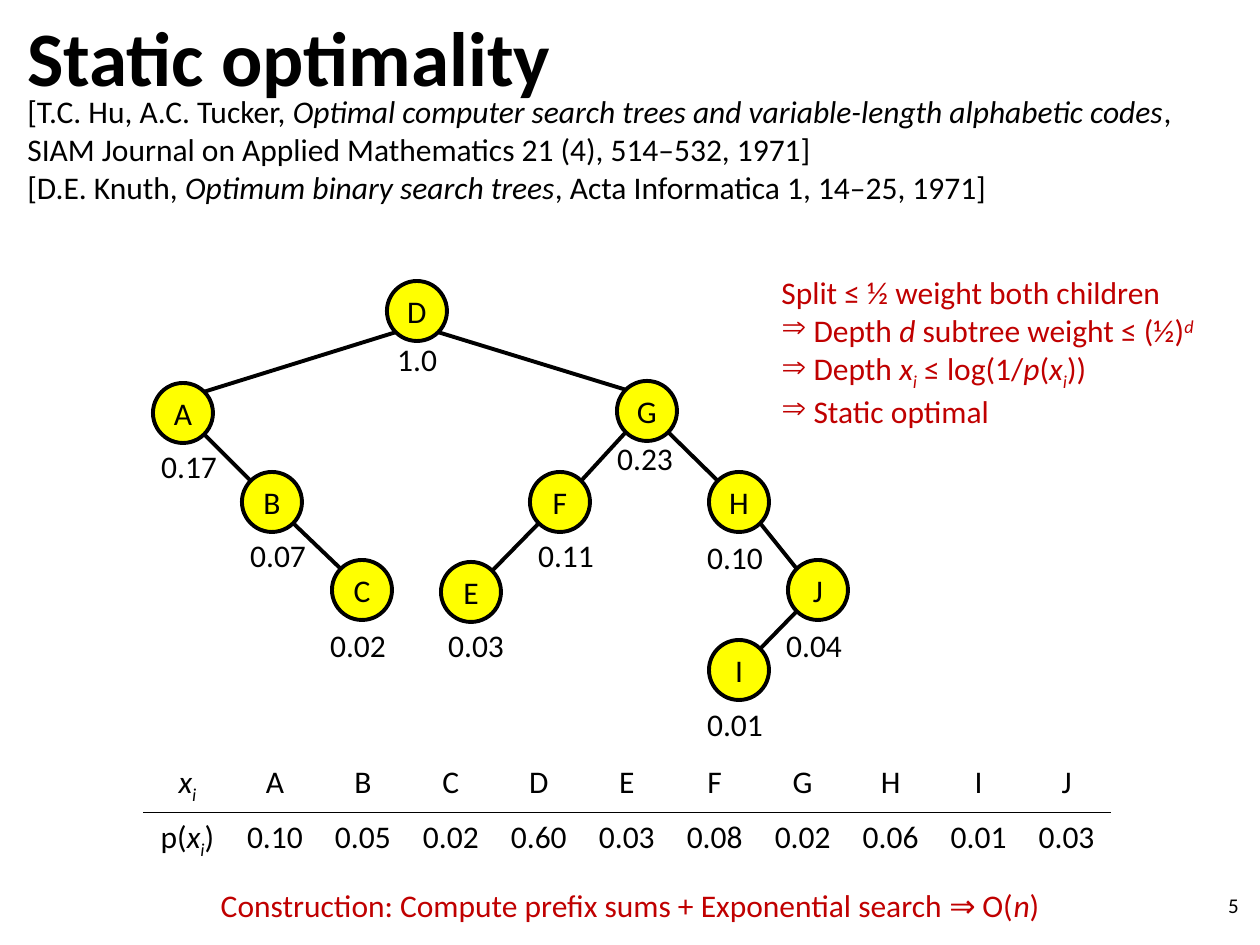
from collections import namedtuple
from math import sqrt

from lxml.etree import SubElement
from pptx import Presentation
from pptx.dml.color import RGBColor
from pptx.enum.shapes import MSO_CONNECTOR as Connector, MSO_SHAPE as Shape
from pptx.enum.text import MSO_ANCHOR as Anchor, PP_ALIGN as Align
from pptx.oxml.ns import qn
from pptx.util import Emu, Pt

BLACK = RGBColor(0x00, 0x00, 0x00)
WHITE = RGBColor(0xFF, 0xFF, 0xFF)
YELLOW = RGBColor(0xFF, 0xFF, 0x00)
RED = RGBColor(0xC0, 0x00, 0x00)

EMU_PER_PX = 914400 / 126
ITALIC = dict(italic=True)
SUB = dict(italic=True, baseline=-25000)
SUPER = dict(italic=True, baseline=30000)
X_I = [("x", ITALIC), ("i", SUB)]

Node = namedtuple("Node", "x y weight label_x label_top")
TREE = {
    "D": Node(417, 311, "1.0", 417, 334),
    "A": Node(183, 413, "0.17", 189, 441),
    "G": Node(647, 411, "0.23", 645, 433),
    "B": Node(272, 502, "0.07", 278, 530),
    "C": Node(362, 590, "0.02", 358, 620),
    "F": Node(560, 502, "0.11", 566, 530),
    "E": Node(471, 592, "0.03", 476, 620),
    "H": Node(739, 502, "0.10", 735, 532),
    "I": Node(739, 670, "0.01", 735, 699),
    "J": Node(818, 590, "0.04", 814, 620),
}
EDGES = ["DA", "DG", "AB", "BC", "GF", "GH", "FE", "HJ", "JI"]
PROBABILITIES = ["0.10", "0.05", "0.02", "0.60", "0.03",
                 "0.08", "0.02", "0.06", "0.01", "0.03"]


def px(length):
    return Emu(round(length * EMU_PER_PX))


def add_run(paragraph, text, *, size=18, color=BLACK, bold=False,
            italic=False, baseline=0):
    run = paragraph.add_run()
    run.text = text
    font = run.font
    font.name, font.size, font.bold, font.italic = "Calibri", Pt(size), bold, italic
    font.color.rgb = color
    if baseline:
        run._r.get_or_add_rPr().set("baseline", str(baseline))


def write(frame, paragraphs, align=Align.LEFT, **style):
    """Fill a frame; a paragraph is a string or a list of strings and (text, format)."""
    for index, runs in enumerate(paragraphs):
        paragraph = frame.add_paragraph() if index else frame.paragraphs[0]
        paragraph.alignment = align
        for run in [runs] if isinstance(runs, str) else runs:
            text, extra = (run, {}) if isinstance(run, str) else run
            add_run(paragraph, text, **{**style, **extra})


def add_bullet(paragraph, symbol):
    properties = paragraph._p.get_or_add_pPr()
    properties.set("marL", "0")
    properties.set("indent", "0")
    SubElement(properties, qn("a:buFont"), typeface="Symbol")
    SubElement(properties, qn("a:buChar"), char=symbol)


def add_border(cell, side, color):
    line = SubElement(cell._tc.get_or_add_tcPr(), qn(f"a:ln{side}"), w=str(Pt(1)))
    fill = SubElement(line, qn("a:solidFill"))
    SubElement(fill, qn("a:srgbClr"), val=str(color))


class TreeSlide:
    DIAMETER = 60
    LABEL_WIDTH = 169
    LINE_WIDTH = Pt(2.25)

    def __init__(self, deck):
        self.slide = deck.slides.add_slide(deck.slide_layouts[6])
        self.shapes = self.slide.shapes

    def text(self, left, top, width, height, paragraphs, anchor=Anchor.TOP, **style):
        frame = self.shapes.add_textbox(*map(px, (left, top, width, height))).text_frame
        frame.word_wrap = True
        frame.vertical_anchor = anchor
        write(frame, paragraphs, **style)
        return frame

    def node(self, key, node):
        radius = self.DIAMETER / 2
        circle = self.shapes.add_shape(
            Shape.OVAL, px(node.x - radius), px(node.y - radius),
            px(self.DIAMETER), px(self.DIAMETER))
        circle.shadow.inherit = False
        circle.fill.solid()
        circle.fill.fore_color.rgb = YELLOW
        circle.line.color.rgb = BLACK
        circle.line.width = self.LINE_WIDTH
        frame = circle.text_frame
        frame.margin_left = frame.margin_right = 0
        frame.margin_top = frame.margin_bottom = 0
        frame.vertical_anchor = Anchor.MIDDLE
        write(frame, [key], align=Align.CENTER)
        self.text(node.label_x - self.LABEL_WIDTH / 2, node.label_top,
                  self.LABEL_WIDTH, 50, [node.weight], align=Align.CENTER)

    def edge(self, parent, child):
        """Join the diagonal points of two circles, parent's lower to child's upper."""
        offset = self.DIAMETER / 2 / sqrt(2)
        shift = offset if child.x > parent.x else -offset
        ends = (parent.x + shift, parent.y + offset, child.x - shift, child.y - offset)
        line = self.shapes.add_connector(Connector.STRAIGHT, *map(px, ends))
        line.line.color.rgb = BLACK
        line.line.width = self.LINE_WIDTH
        SubElement(line._element.spPr, qn("a:effectLst"))

    def table(self, left, top, widths, row_height, rows):
        table = self.shapes.add_table(
            len(rows), len(widths), px(left), px(top),
            px(sum(widths)), px(row_height * len(rows))).table
        table.first_row = table.horz_banding = False
        for column, width in zip(table.columns, widths):
            column.width = px(width)
        for r, row in enumerate(rows):
            table.rows[r].height = px(row_height)
            inner_side = "T" if r else "B"
            for c, content in enumerate(row):
                cell = table.cell(r, c)
                for side in "LRTB":
                    add_border(cell, side, BLACK if side == inner_side else WHITE)
                cell.fill.background()
                write(cell.text_frame, [content], align=Align.CENTER)


def main():
    deck = Presentation()
    deck.slide_width, deck.slide_height = px(1260), px(945)
    page = TreeSlide(deck)

    page.text(15, 86, 1197, 139, [
        ["[T.C. Hu, A.C. Tucker, ",
         ("Optimal computer search trees and variable-length alphabetic codes", ITALIC),
         ", SIAM Journal on Applied Mathematics 21 (4), 514–532, 1971]"],
        ["[D.E. Knuth, ", ("Optimum binary search trees", ITALIC),
         ", Acta Informatica 1, 14–25, 1971]"],
    ])
    page.text(958, 880, 293, 50, ["5"], anchor=Anchor.MIDDLE, align=Align.RIGHT, size=12)
    page.text(15, -4, 1134, 119, ["Static optimality"],
              anchor=Anchor.MIDDLE, size=44, bold=True)

    page.table(144, 757, [87] + [88] * len(PROBABILITIES), 51, [
        [X_I, *sorted(TREE)],
        [["p(", *X_I, ")"], *PROBABILITIES],
    ])

    for key, node in TREE.items():
        page.node(key, node)
    for parent, child in EDGES:
        page.edge(TREE[parent], TREE[child])

    argument = page.text(769, 267, 476, 165, [
        "Split ≤ ½ weight both children",
        [" Depth ", ("d ", ITALIC), "subtree weight ≤ (½)", ("d", SUPER)],
        [" Depth ", *X_I, " ≤ log(1/", ("p", ITALIC), "(", *X_I, "))"],
        " Static optimal",
    ], color=RED)
    for consequence in argument.paragraphs[1:]:
        add_bullet(consequence, "⇒")

    page.text(134, 880, 992, 50, [
        ["Construction: Compute prefix sums + Exponential search ⇒ O(", ("n", ITALIC), ")"],
    ], align=Align.CENTER, color=RED)

    deck.save("out.pptx")


if __name__ == "__main__":
    main()
